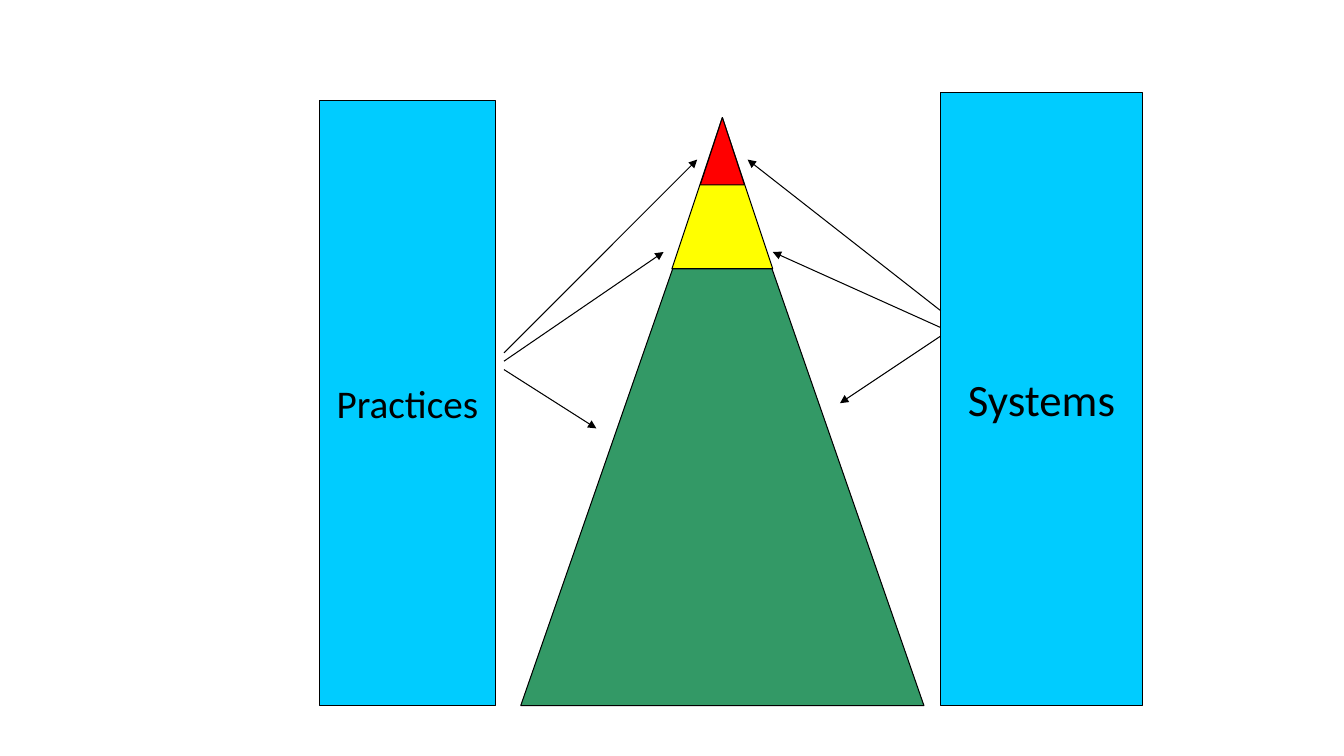
from lxml.etree import SubElement
from pptx import Presentation
from pptx.dml.color import RGBColor
from pptx.enum.shapes import MSO_CONNECTOR, MSO_SHAPE
from pptx.enum.text import MSO_ANCHOR, PP_ALIGN
from pptx.oxml.ns import qn
from pptx.util import Pt

COLORS = {
    "green": "339966", "yellow": "FFFF00", "red": "FF0000",
    "blue": "00CCFF", "black": "000000",
}

# Lengths in px, 96 to the inch: left, top, width, height
PYRAMID_TIERS = [
    ("green", (496, 120, 384, 552)),
    ("yellow", (640, 112, 96, 144)),
    ("red", (667, 112, 42, 64)),
]
PANELS = [
    ("Practices", 28, (304, 96, 168, 576)),
    ("Systems", 32, (896, 88, 192, 584)),
]
# Start x of each side, then (start y, tip x, tip y)
ARROWS = {
    480: [(352, 568, 408), (344, 632, 240), (336, 664, 152)],
    896: [(320, 800, 384), (312, 736, 240), (296, 712, 152)],
}
SLIDE_SIZE = (1280, 720)
EMU_PER_PX = 9525
LINE_WIDTH = Pt(0.75)


def emu(lengths):
    return [length * EMU_PER_PX for length in lengths]


def color(name):
    return RGBColor.from_string(COLORS[name])


def outline(line):
    line.color.rgb = color("black")
    line.width = LINE_WIDTH


def add_filled_shape(slide, kind, box, fill):
    shape = slide.shapes.add_shape(kind, *emu(box))
    shape.shadow.inherit = False
    shape.fill.solid()
    shape.fill.fore_color.rgb = color(fill)
    outline(shape.line)
    return shape


def add_panel(slide, label, size, box):
    text_frame = add_filled_shape(slide, MSO_SHAPE.RECTANGLE, box, "blue").text_frame
    text_frame.word_wrap = False
    text_frame.vertical_anchor = MSO_ANCHOR.MIDDLE
    paragraph = text_frame.paragraphs[0]
    paragraph.alignment = PP_ALIGN.CENTER
    run = paragraph.add_run()
    run.text = label
    for name, value in {"name": "Calibri", "size": Pt(size)}.items():
        setattr(run.font, name, value)
    run.font.color.rgb = color("black")


def add_arrow(slide, start, tip):
    connector = slide.shapes.add_connector(
        MSO_CONNECTOR.STRAIGHT, *emu(start), *emu(tip))
    outline(connector.line)
    properties = connector._element.spPr
    SubElement(properties.find(qn("a:ln")), qn("a:tailEnd"), type="triangle")
    SubElement(properties, qn("a:effectLst"))


def main():
    presentation = Presentation()
    presentation.slide_width, presentation.slide_height = emu(SLIDE_SIZE)
    slide = presentation.slides.add_slide(presentation.slide_layouts[6])
    for fill, box in PYRAMID_TIERS:
        add_filled_shape(slide, MSO_SHAPE.ISOSCELES_TRIANGLE, box, fill)
    for label, size, box in PANELS:
        add_panel(slide, label, size, box)
    for start_x, arrows in ARROWS.items():
        for start_y, *tip in arrows:
            add_arrow(slide, (start_x, start_y), tip)
    presentation.save("out.pptx")


if __name__ == "__main__":
    main()
